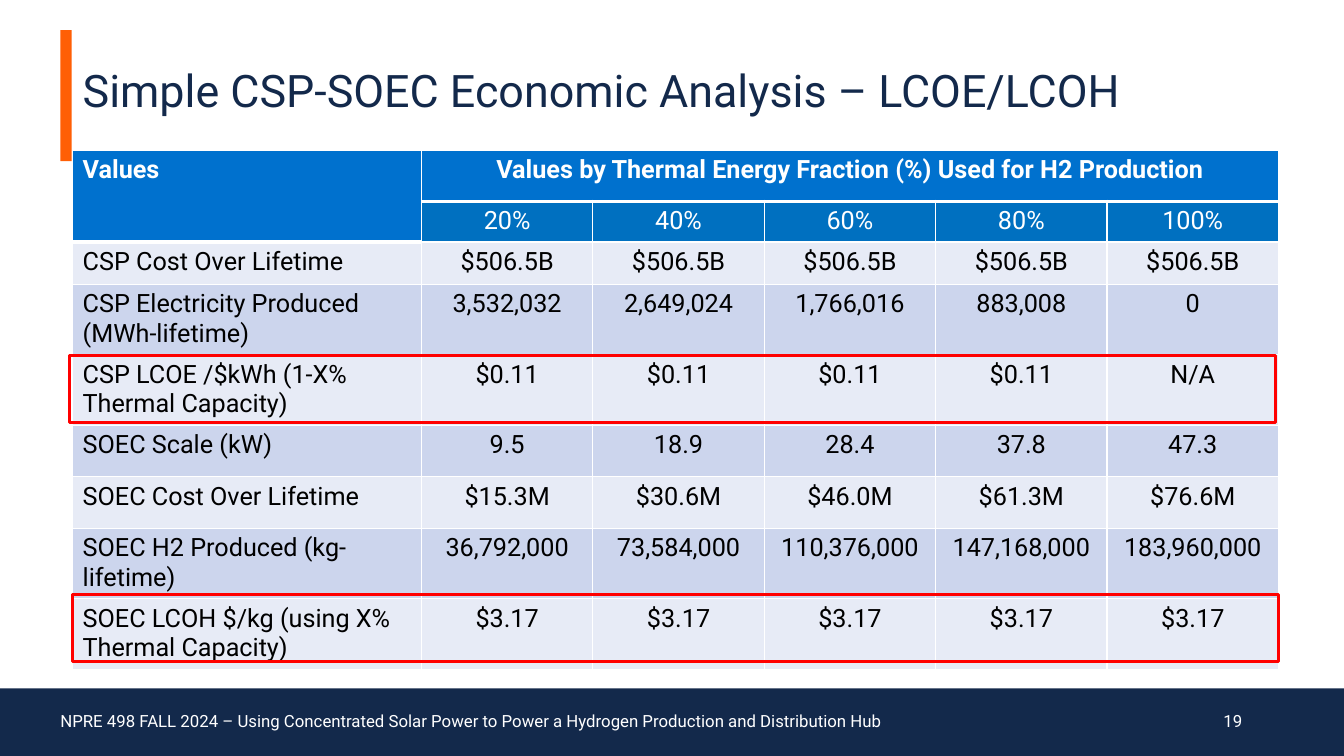
import pptx
import pptx.dml.color
import pptx.enum.shapes
import pptx.enum.text
import pptx.oxml
import pptx.oxml.ns
import pptx.util

Inches = pptx.util.Inches
Pt = pptx.util.Pt
ALIGN = pptx.enum.text.PP_ALIGN
FONT = "Roboto"
COLORS = {
    "orange": "FF5F05",
    "navy": "13294B",
    "white": "FFFFFF",
    "black": "000000",
    "header": "0071CE",
    "subheader": "0070C0",
    "light": "E7EBF6",
    "dark": "CCD5ED",
    "highlight": "FF0000",
}
COLUMN_WIDTHS = [3.46] + [1.7] * 5
ROW_HEIGHTS = [0.51, 0.39, 0.42, 0.68, 0.68, 0.51, 0.51, 0.68, 0.68]
ROWS = [
    ["Values", "Values by Thermal Energy Fraction (%) Used for H2 Production"],
    ["", "20%", "40%", "60%", "80%", "100%"],
    ["CSP Cost Over Lifetime"] + ["$506.5B"] * 5,
    ["CSP Electricity Produced (MWh-lifetime)",
     "3,532,032", "2,649,024", "1,766,016", "883,008", "0"],
    ["CSP LCOE /$kWh (1-X% Thermal Capacity)"] + ["$0.11"] * 4 + ["N/A"],
    ["SOEC Scale (kW)", "9.5", "18.9", "28.4", "37.8", "47.3"],
    ["SOEC Cost Over Lifetime", "$15.3M", "$30.6M", "$46.0M", "$61.3M", "$76.6M"],
    ["SOEC H2 Produced (kg-lifetime)",
     "36,792,000", "73,584,000", "110,376,000", "147,168,000", "183,960,000"],
    ["SOEC LCOH $/kg (using X% Thermal Capacity)"] + ["$3.17"] * 5,
]


def rgb(name):
    return pptx.dml.color.RGBColor.from_string(COLORS[name])


def write(frame, text, size, color, align=ALIGN.LEFT, bold=False, spacing=None):
    paragraph = frame.paragraphs[0]
    paragraph.alignment = align
    if spacing:
        paragraph.line_spacing = spacing
    run = paragraph.add_run()
    run.text = text
    run.font.name = FONT
    run.font.size = Pt(size)
    run.font.bold = bold
    run.font.color.rgb = rgb(color)


def add_rectangle(slide, box, fill=None, line=None):
    rectangle = slide.shapes.add_shape(
        pptx.enum.shapes.MSO_SHAPE.RECTANGLE, *map(Inches, box))
    rectangle.shadow.inherit = False
    if fill:
        rectangle.fill.solid()
        rectangle.fill.fore_color.rgb = rgb(fill)
    else:
        rectangle.fill.background()
    if line:
        rectangle.line.color.rgb = rgb(line)
        rectangle.line.width = Pt(2.25)
    else:
        rectangle.line.fill.background()


def add_title(slide, left, top, width, height):
    add_rectangle(slide, (left - 0.12, top, 0.11, height), fill="orange")
    title = slide.shapes.title
    title.left, title.top = Inches(left), Inches(top)
    title.width, title.height = Inches(width), Inches(height)
    frame = title.text_frame
    frame.word_wrap = True
    frame.auto_size = pptx.enum.text.MSO_AUTO_SIZE.NONE
    frame.vertical_anchor = pptx.enum.text.MSO_ANCHOR.MIDDLE
    write(frame, "Simple CSP-SOEC Economic Analysis – LCOE/LCOH", 32, "navy", spacing=0.7)


def add_footer(slide, left, top, width, height):
    add_rectangle(slide, (left, top, width, height), fill="navy")
    captions = [
        (0.5, 8.92, ALIGN.LEFT, "NPRE 498 FALL 2024 – Using Concentrated Solar Power "
         "to Power a Hydrogen Production and Distribution Hub"),
        (9.42, 3, ALIGN.RIGHT, "19"),
    ]
    for offset, caption_width, align, text in captions:
        caption = slide.shapes.add_textbox(
            Inches(left + offset), Inches(top + 0.12), Inches(caption_width), Inches(0.4))
        frame = caption.text_frame
        frame.word_wrap = True
        frame.vertical_anchor = pptx.enum.text.MSO_ANCHOR.MIDDLE
        write(frame, text, 12, "white", align)


def set_borders(cell, top, bottom):
    properties = cell._tc.get_or_add_tcPr()
    for side, points in (("L", 1), ("R", 1), ("T", top), ("B", bottom)):
        properties.append(pptx.oxml.parse_xml(
            f'<a:ln{side} {pptx.oxml.ns.nsdecls("a")} w="{Pt(points)}"><a:solidFill>'
            f'<a:srgbClr val="{COLORS["white"]}"/></a:solidFill></a:ln{side}>'))


def row_fill(row):
    if row < 2:
        return ("header", "subheader")[row]
    return "dark" if row % 2 else "light"


def add_values_table(slide, left, top):
    table = slide.shapes.add_table(
        len(ROWS), len(COLUMN_WIDTHS), Inches(left), Inches(top),
        Inches(sum(COLUMN_WIDTHS)), Inches(sum(ROW_HEIGHTS))).table
    for column, width in zip(table.columns, COLUMN_WIDTHS):
        column.width = Inches(width)
    for row, height in zip(table.rows, ROW_HEIGHTS):
        row.height = Inches(height)
    for row in range(len(ROWS)):
        for column in range(len(COLUMN_WIDTHS)):
            cell = table.cell(row, column)
            under_header = row == 1 and column > 0 or row == 2 and column == 0
            over_body = row == 0 or row == 1 and column == 0
            set_borders(cell, 3 if under_header else 1, 3 if over_body else 1)
            cell.fill.solid()
            cell.fill.fore_color.rgb = rgb("header" if column == 0 and row < 2 else row_fill(row))
    table.cell(0, 0).merge(table.cell(1, 0))
    table.cell(0, 1).merge(table.cell(0, len(COLUMN_WIDTHS) - 1))
    for row, texts in enumerate(ROWS):
        for column, text in enumerate(texts):
            if text:
                write(table.cell(row, column).text_frame, text, 18,
                      "white" if row < 2 else "black",
                      ALIGN.CENTER if column else ALIGN.LEFT, bold=row == 0)


def add_highlights(slide, left, top, width):
    for shift, drop in ((-0.03, 2.04), (0, 4.41)):
        add_rectangle(slide, (left + shift, top + drop, width, 0.66), line="highlight")


def main():
    presentation = pptx.Presentation()
    presentation.slide_width, presentation.slide_height = Inches(13.33), Inches(7.5)
    slide = presentation.slides.add_slide(presentation.slide_layouts[5])
    add_title(slide, 0.72, 0.3, 11.34, 1.3)
    add_footer(slide, 0, 6.83, 13.33, 0.67)
    add_values_table(slide, 0.72, 1.49)
    add_highlights(slide, 0.72, 1.49, 11.96)
    presentation.save("out.pptx")


if __name__ == "__main__":
    main()
